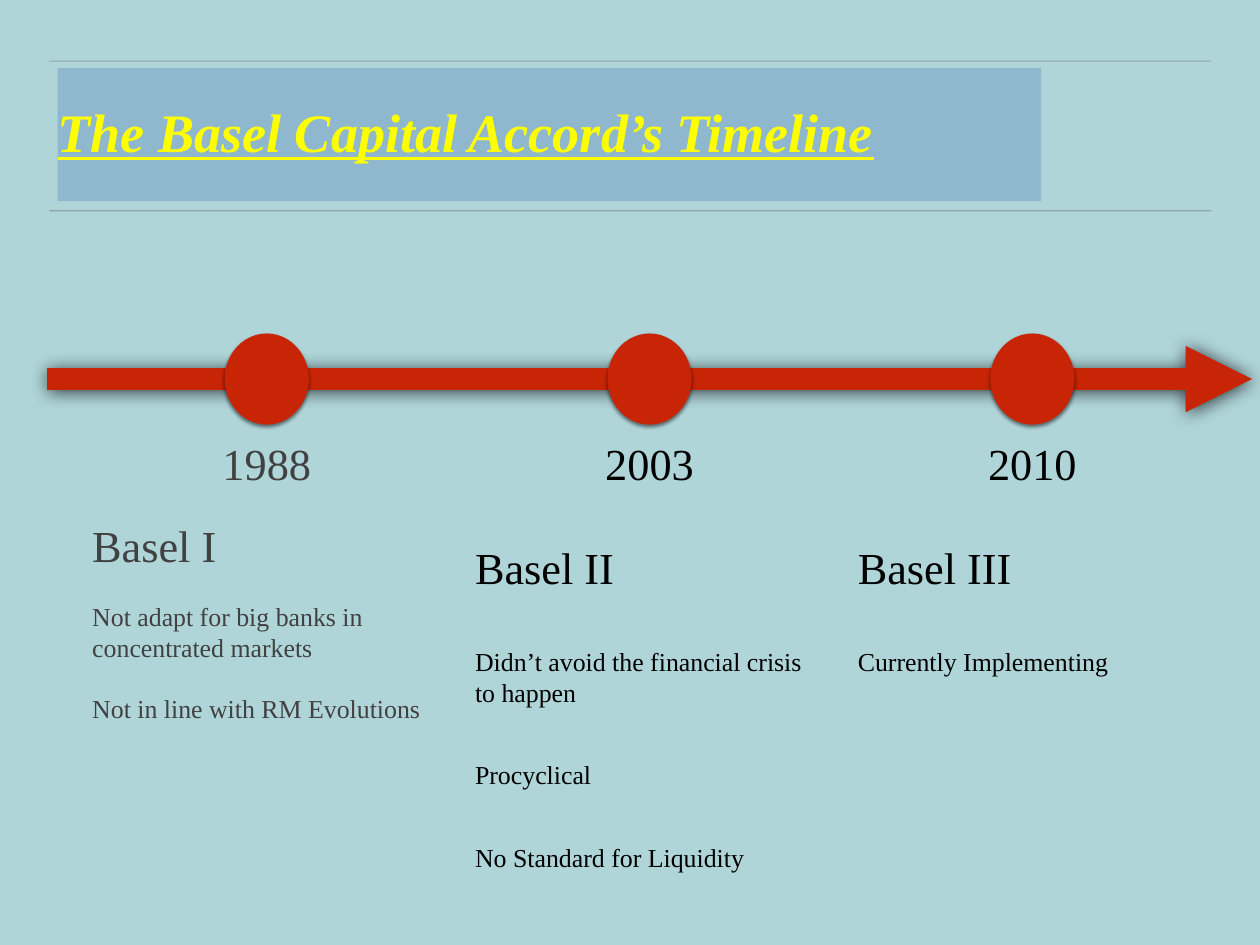
"""Build a slide with the timeline of the Basel capital accords."""
import lxml.etree
import pptx
import pptx.dml.color
import pptx.enum.shapes
import pptx.enum.text
import pptx.oxml.ns
import pptx.util

WIDTH = pptx.util.Inches(14.22)
HEIGHT = pptx.util.Inches(10.67)
COLORS = {
    "background": "AFD5D9", "rule": "444444", "banner": "8FB8CE",
    "title": "FFFF00", "timeline": "C82506", "shadow": "000000",
    "first": "414141", "later": "000000",
}
FONT = "Times New Roman"
TITLE_FORMAT = {"name": FONT, "size": pptx.util.Pt(44), "bold": True, "italic": True, "underline": True}
HEADING_FORMAT = {"name": FONT, "size": pptx.util.Pt(36)}
DETAIL_FORMAT = {"name": FONT, "size": pptx.util.Pt(21)}

FIRST_CENTER, CENTER_STEP = 21.17, 30.38
AXIS_ROW = 40.11
DOT_WIDTH, DOT_HEIGHT = 6.68, 9.65
TEXT_TOP, TEXT_WIDTH, TEXT_HEIGHT = 46.11, 27.7, 64.39
MILESTONES = [
    ("1988", "Basel I", ["Not adapt for big banks in concentrated markets",
                         "Not in line with RM Evolutions"], "first", 24),
    ("2003", "Basel II", ["Didn’t avoid the financial crisis to happen",
                          "Procyclical", "No Standard for Liquidity"], "later", 42),
    ("2010", "Basel III", ["Currently Implementing"], "later", 42),
]


def columns(count):
    return round(WIDTH * count / 100)


def rows(count):
    return round(HEIGHT * count / 100)


def box(left, top, width, height):
    return columns(left), rows(top), columns(width), rows(height)


def color(name):
    return pptx.dml.color.RGBColor.from_string(COLORS[name])


def add_element(parent, tag, **attributes):
    return lxml.etree.SubElement(parent, pptx.oxml.ns.qn(tag), attributes)


def set_shadow(shape, opacity=None, blur=0, distance=0):
    properties = shape.element.spPr
    effects = properties.find(pptx.oxml.ns.qn("a:effectLst"))
    if effects is None:
        effects = add_element(properties, "a:effectLst")
    if opacity is not None:
        shadow = add_element(effects, "a:outerShdw", blurRad=str(pptx.util.Pt(blur)),
                             dist=str(pptx.util.Pt(distance)), dir="5400000", rotWithShape="0")
        tint = add_element(shadow, "a:srgbClr", val=COLORS["shadow"])
        add_element(tint, "a:alpha", val=str(opacity * 1000))


def add_line(slide, left, right, row, color_name, weight):
    line = slide.shapes.add_connector(
        pptx.enum.shapes.MSO_CONNECTOR.STRAIGHT, columns(left), rows(row), columns(right), rows(row))
    line.line.color.rgb = color(color_name)
    line.line.width = pptx.util.Pt(weight)
    return line


def add_rule(slide, row):
    rule = add_line(slide, 3.91, 96.13, row, "rule", 1)
    tint = next(rule.element.spPr.iter(pptx.oxml.ns.qn("a:srgbClr")))
    add_element(tint, "a:alpha", val="30000")
    set_shadow(rule)


def add_axis(slide):
    axis = add_line(slide, 3.73, 99.37, AXIS_ROW, "timeline", 18)
    outline = axis.element.spPr.find(pptx.oxml.ns.qn("a:ln"))
    add_element(outline, "a:tailEnd", type="triangle")
    set_shadow(axis, 75, 15, 1)


def add_filled_shape(slide, kind, bounds, color_name):
    shape = slide.shapes.add_shape(kind, *bounds)
    shape.shadow.inherit = False
    shape.fill.solid()
    shape.fill.fore_color.rgb = color(color_name)
    shape.line.fill.background()
    return shape


def prepare_frame(shape):
    frame = shape.text_frame
    settings = {"word_wrap": True, "margin_left": 0, "margin_right": 0,
                "margin_top": 0, "margin_bottom": 0}
    for name, value in settings.items():
        setattr(frame, name, value)
    return frame


def write_paragraph(paragraph, text, font_format, color_name, alignment="LEFT"):
    paragraph.text = text
    paragraph.alignment = pptx.enum.text.PP_ALIGN[alignment]
    for name, value in font_format.items():
        setattr(paragraph.font, name, value)
    paragraph.font.color.rgb = color(color_name)


def add_title(slide, text):
    banner = add_filled_shape(slide, pptx.enum.shapes.MSO_SHAPE.RECTANGLE,
                              box(4.57, 7.22, 78.06, 14.06), "banner")
    frame = prepare_frame(banner)
    frame.vertical_anchor = pptx.enum.text.MSO_ANCHOR.MIDDLE
    write_paragraph(frame.paragraphs[0], text, TITLE_FORMAT, "title")
    frame.paragraphs[0].line_spacing = 0.9


def add_dot(slide, center):
    bounds = box(center - DOT_WIDTH / 2, AXIS_ROW - DOT_HEIGHT / 2, DOT_WIDTH, DOT_HEIGHT)
    dot = add_filled_shape(slide, pptx.enum.shapes.MSO_SHAPE.OVAL, bounds, "timeline")
    set_shadow(dot, 50, 3, 2)


def add_milestone_text(slide, center, year, accord, details, color_name, gap):
    shape = slide.shapes.add_textbox(*box(center - TEXT_WIDTH / 2, TEXT_TOP, TEXT_WIDTH, TEXT_HEIGHT))
    frame = prepare_frame(shape)
    write_paragraph(frame.paragraphs[0], year, HEADING_FORMAT, color_name, "CENTER")
    entries = [(accord, HEADING_FORMAT)] + [(detail, DETAIL_FORMAT) for detail in details]
    for text, font_format in entries:
        paragraph = frame.add_paragraph()
        write_paragraph(paragraph, text, font_format, color_name)
        paragraph.space_before = pptx.util.Pt(gap)


def main():
    presentation = pptx.Presentation()
    presentation.slide_width, presentation.slide_height = WIDTH, HEIGHT
    slide = presentation.slides.add_slide(presentation.slide_layouts[6])
    slide.background.fill.solid()
    slide.background.fill.fore_color.rgb = color("background")
    for row in (22.31, 6.47):
        add_rule(slide, row)
    add_title(slide, "The Basel Capital Accord’s Timeline")
    centers = [FIRST_CENTER + CENTER_STEP * index for index in range(len(MILESTONES))]
    for center, milestone in zip(centers, MILESTONES):
        add_milestone_text(slide, center, *milestone)
    add_axis(slide)
    for center in centers:
        add_dot(slide, center)
    presentation.save("out.pptx")


if __name__ == "__main__":
    main()
